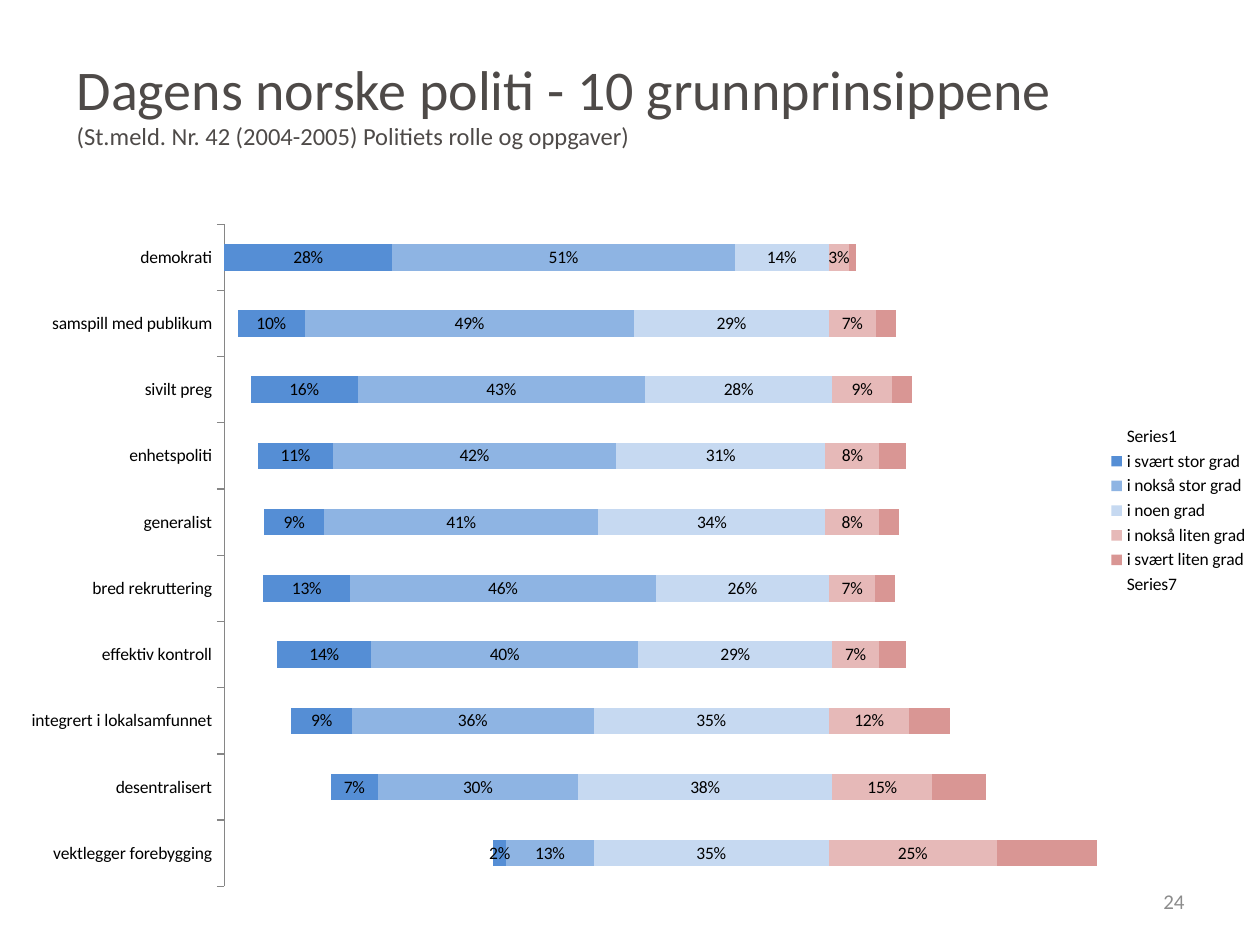
from lxml import etree
from pptx import Presentation
from pptx.chart.data import CategoryChartData
from pptx.dml.color import RGBColor
from pptx.enum import chart as ch, text
from pptx.oxml.ns import qn
from pptx.util import Inches, Pt


def rgb(value):
    return RGBColor.from_string(value)


def add_text(s, box, lines, color):
    """Add a text box with one paragraph per (words, size) pair."""
    tf = s.shapes.add_textbox(*[Inches(v) for v in box]).text_frame
    tf.word_wrap = True
    tf.text = "\n".join(words for words, size in lines)
    for p, (words, size) in zip(tf.paragraphs, lines):
        f = p.runs[0].font
        f.name, f.size, f.color.rgb = "Calibri", Pt(size), rgb(color)
    return tf


prs = Presentation()
prs.slide_width, prs.slide_height = Inches(10), Inches(7.5)
s = prs.slides.add_slide(prs.slide_layouts[6])

add_text(s, (0.51, 0.38, 9, 0.69), [
    ("Dagens norske politi - 10 grunnprinsippene", 32),
    ("(St.meld. Nr. 42 (2004-2005) Politiets rolle og oppgaver)", 14),
], "4E4A48")

# Categories run from the bottom of the chart to the top.
categories = [
    "vektlegger forebygging", "desentralisert", "integrert i lokalsamfunnet",
    "effektiv kontroll", "bred rekruttering", "generalist", "enhetspoliti",
    "sivilt preg", "samspill med publikum", "demokrati",
]
# Name, fill, labels shown, percentages; the unfilled end series align the bars.
series = [
    ("Series1", None, False, [50, 26, 20, 18, 16, 16, 15, 14, 12, 7]),
    ("i svært stor grad", "558ED5", True, [2, 7, 9, 14, 13, 9, 11, 16, 10, 28]),
    ("i nokså stor grad", "8EB4E3", True, [13, 30, 36, 40, 46, 41, 42, 43, 49, 51]),
    ("i noen grad", "C6D9F1", True, [35, 38, 35, 29, 26, 34, 31, 28, 29, 14]),
    ("i nokså liten grad", "E6B9B8", True, [25, 15, 12, 7, 7, 8, 8, 9, 7, 3]),
    ("i svært liten grad", "D99694", False, [19, 8, 6, 4, 3, 3, 4, 3, 3, 1]),
    ("Series7", None, False, [56, 77, 82, 89, 91, 90, 88, 88, 90, 96]),
]
data = CategoryChartData(number_format="0%")
data.categories = categories
for name, color, labelled, percents in series:
    data.add_series(name, [v / 100 for v in percents])

chart = s.shapes.add_chart(
    ch.XL_CHART_TYPE.BAR_STACKED_100, Inches(0.01), Inches(1.07),
    Inches(10), Inches(5.97), data).chart
chart.has_title = False
chart.font.name, chart.font.size = "Calibri", Pt(10)
chart.font.color.rgb = rgb("000000")
chart.has_legend = True
chart.legend.position = ch.XL_LEGEND_POSITION.RIGHT
chart.legend.include_in_layout = False

plot = chart.plots[0]
plot.gap_width, plot.overlap = 150, 100
plot.vary_by_categories = False
for ser, (name, color, labelled, percents) in zip(plot.series, series):
    ser.format.line.fill.background()
    if color:
        ser.format.fill.solid()
        ser.format.fill.fore_color.rgb = rgb(color)
    else:
        ser.format.fill.background()
    if labelled:
        labels = ser.data_labels
        labels.show_value = True
        labels.number_format, labels.number_format_is_linked = "0%", False
        labels.position = ch.XL_LABEL_POSITION.CENTER

axis = chart.category_axis
axis.major_tick_mark = ch.XL_TICK_MARK.OUTSIDE
axis.tick_label_position = ch.XL_TICK_LABEL_POSITION.LOW
axis.format.line.color.rgb = rgb("868686")
axis.format.line.width = Pt(0.75)
values = chart.value_axis
values.minimum_scale, values.maximum_scale = 0.05, 0.7
values.has_major_gridlines = False
values.visible = False

# Fix the inner plot area as fractions of the chart frame.
area = chart._chartSpace.chart.plotArea
for old in area.findall(qn("c:layout")):
    area.remove(old)
layout = etree.Element(qn("c:layout"))
manual = etree.SubElement(layout, qn("c:manualLayout"))
for tag, val in [("layoutTarget", "inner"), ("xMode", "edge"), ("yMode", "edge"),
                 ("x", "0.177"), ("y", "0.119"), ("w", "0.693"), ("h", "0.881")]:
    etree.SubElement(manual, qn("c:" + tag)).set("val", val)
area.insert(0, layout)

tf = add_text(s, (7.17, 6.95, 2.33, 0.4), [("24", 12)], "8C8C8C")
tf.vertical_anchor = text.MSO_ANCHOR.MIDDLE
tf.paragraphs[0].alignment = text.PP_ALIGN.RIGHT

prs.save("out.pptx")
